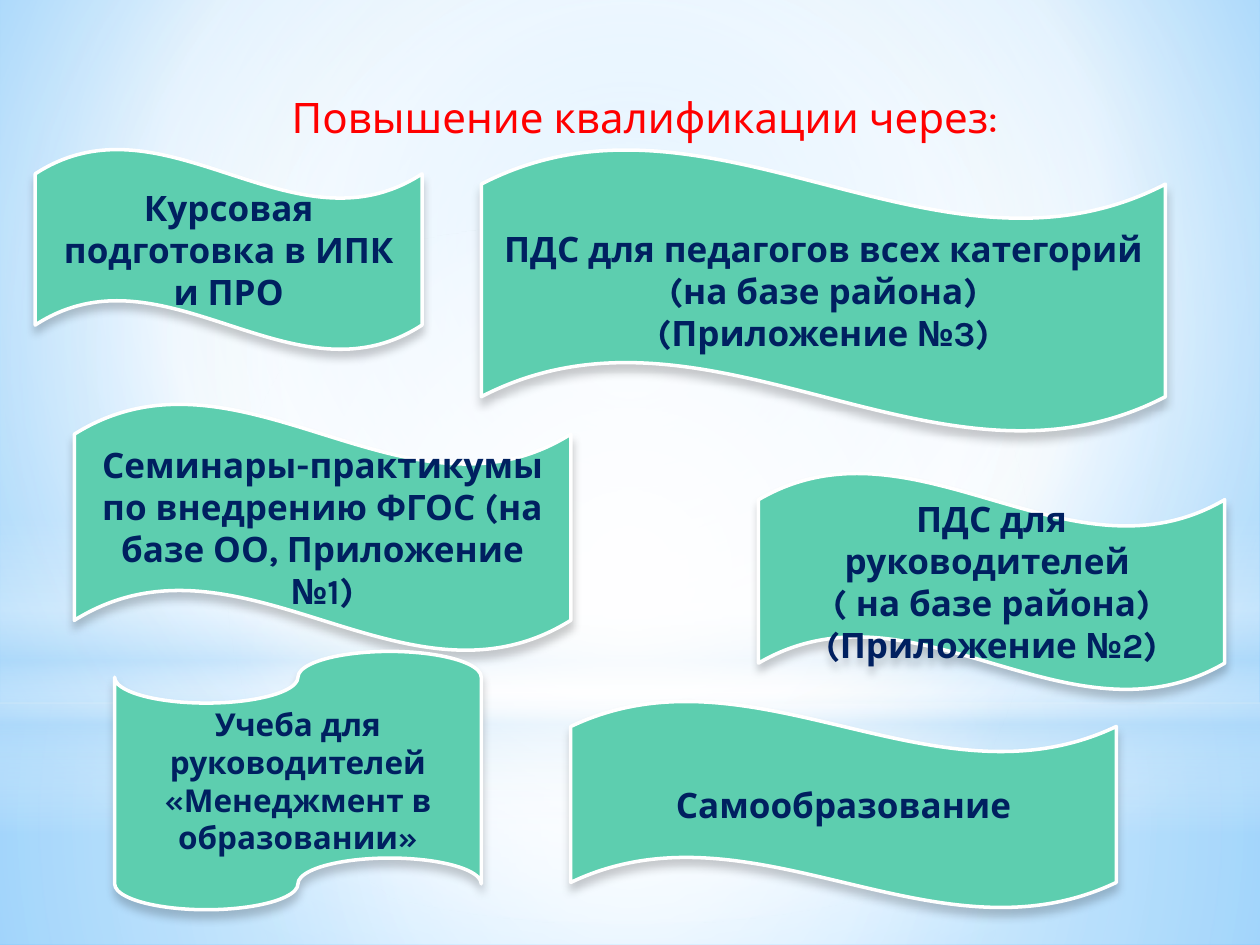
from pptx import Presentation
from pptx.dml.color import RGBColor
from pptx.enum.shapes import MSO_SHAPE
from pptx.enum.text import MSO_ANCHOR, MSO_AUTO_SIZE, PP_ALIGN
from pptx.oxml import parse_xml
from pptx.oxml.ns import nsdecls, qn
from pptx.util import Inches, Pt

RECT, OVAL, WAVE = MSO_SHAPE.RECTANGLE, MSO_SHAPE.OVAL, MSO_SHAPE.WAVE
TAPE = MSO_SHAPE.FLOWCHART_PUNCHED_TAPE
MIDDLE, GROW, CENTER = MSO_ANCHOR.MIDDLE, MSO_AUTO_SIZE.SHAPE_TO_FIT_TEXT, PP_ALIGN.CENTER
RED = RGBColor(0xFF, 0x00, 0x00)
NAVY = RGBColor(0x00, 0x20, 0x60)
MINT = RGBColor(0x5D, 0xCE, 0xAF)
WHITE = RGBColor(0xFF, 0xFF, 0xFF)
BLACK = RGBColor(0x00, 0x00, 0x00)
PALE = RGBColor(0xB4, 0xDC, 0xFA)
SKY = RGBColor(0x9E, 0xD5, 0xFF)
BLUE = RGBColor(0x5B, 0xB9, 0xFF)
COLS, ROWS = 100, 75
MID = (50, 50, 50, 50)

GLOWS = [
    (RECT, (0, 55.8, 100, 19.2), [(0, WHITE, 91), (37, WHITE, 76), (100, PALE, 79)], MID),
    (RECT, (0, 0, 100, 55.8), [(0, WHITE, 89), (48, WHITE, 62), (100, PALE, 79)], MID),
    (RECT, (0, 41.2, 100, 25), [(0, WHITE, 0), (29, WHITE, 30), (45, PALE, 40),
                                (55, WHITE, 26), (65, PALE, 60), (100, WHITE, 0)], None),
    (OVAL, (0, 17.5, 100, 55.8), [(0, WHITE, 100), (56, WHITE, 0)], MID),
]
FLAGS = [
    (WAVE, (2.8, 11.8, 30.7, 16), 20, "Курсовая подготовка в ИПК и ПРО"),
    (WAVE, (38.2, 11.8, 54.3, 22.5), 20,
     "ПДС для педагогов всех категорий (на базе района)\n(Приложение №3)"),
    (WAVE, (60.2, 37.5, 37, 17.3), 20,
     "ПДС для руководителей \v( на базе района)\n(Приложение №2)"),
    (WAVE, (5.9, 32, 39.4, 19.7), 20,
     "Семинары-практикумы по внедрению ФГОС (на базе ОО, Приложение №1)"),
    (WAVE, (45.3, 55.6, 43.3, 16.5), 20, "Самообразование"),
    (TAPE, (9.1, 51.7, 29.1, 20.5), 18,
     "Учеба для руководителей\n«Менеджмент в образовании»"),
]


class Deck:
    """Holds the style and the current slide, measured in grid columns and rows."""

    def __init__(self):
        self.prs = Presentation()
        self.prs.slide_width, self.prs.slide_height = Inches(10), Inches(7.5)
        self.slide = self.prs.slides.add_slide(self.prs.slide_layouts[6])
        self.face = {"name": "Karla"}

    def place(self, box):
        wide, high = self.prs.slide_width / COLS, self.prs.slide_height / ROWS
        return [round(n * unit) for n, unit in zip(box, (wide, high, wide, high))]

    def blend(self, stops, focus):
        marks = "".join(
            f'<a:gs pos="{pos * 1000}"><a:srgbClr val="{tint}">'
            f'<a:alpha val="{alpha * 1000}"/></a:srgbClr></a:gs>'
            for pos, tint, alpha in stops)
        way = '<a:lin ang="5400000" scaled="0"/>'
        if focus:
            sides = " ".join(f'{side}="{n * 1000}"' for side, n in zip("ltrb", focus))
            way = f'<a:path path="circle"><a:fillToRect {sides}/></a:path>'
        return (f'<a:gradFill {nsdecls("a")} rotWithShape="1">'
                f'<a:gsLst>{marks}</a:gsLst>{way}</a:gradFill>')

    def ground(self, stops, focus):
        fill = self.blend(stops, focus)
        self.slide.element.cSld.insert(0, parse_xml(
            f'<p:bg {nsdecls("p", "a")}><p:bgPr>{fill}<a:effectLst/></p:bgPr></p:bg>'))

    def shape(self, kind, box):
        shape = self.slide.shapes.add_shape(kind, *self.place(box))
        shape.shadow.inherit = False
        return shape

    def glow(self, kind, box, stops, focus):
        shape = self.shape(kind, box)
        shape.fill.background()
        spot = shape.element.spPr
        spot.replace(spot.find(qn("a:noFill")), parse_xml(self.blend(stops, focus)))
        shape.line.fill.background()

    def label(self, frame, words, tint, **form):
        frame.word_wrap = True
        frame.text = words
        for para in frame.paragraphs:
            para.alignment = CENTER
            for run in para.runs:
                for key, value in {**self.face, **form}.items():
                    setattr(run.font, key, value)
                run.font.color.rgb = tint

    def title(self, box, words):
        frame = self.slide.shapes.add_textbox(*self.place(box)).text_frame
        self.label(frame, words, RED, size=Pt(24))
        frame.auto_size = GROW

    def flag(self, kind, box, size, words):
        shape = self.shape(kind, box)
        shape.fill.solid()
        shape.fill.fore_color.rgb = MINT
        shape.line.color.rgb = WHITE
        shape.line.width = Pt(2)
        shape.element.spPr.find(qn("a:effectLst")).append(parse_xml(
            f'<a:outerShdw {nsdecls("a")} blurRad="{Pt(5)}" dist="{Pt(4)}" dir="5400000" '
            f'rotWithShape="0"><a:srgbClr val="{BLACK}"><a:alpha val="20000"/>'
            '</a:srgbClr></a:outerShdw>'))
        shape.text_frame.vertical_anchor = MIDDLE
        self.label(shape.text_frame, words, NAVY, size=Pt(size), bold=True)


def main():
    deck = Deck()
    deck.ground([(0, SKY, 100), (60, WHITE, 100), (100, BLUE, 100)], (20, 10, 20, 60))
    for glow in GLOWS:
        deck.glow(*glow)
    deck.title((12.2, 6.8, 78, 5), "Повышение квалификации через:")
    for flag in FLAGS:
        deck.flag(*flag)
    deck.prs.save("out.pptx")


if __name__ == "__main__":
    main()
